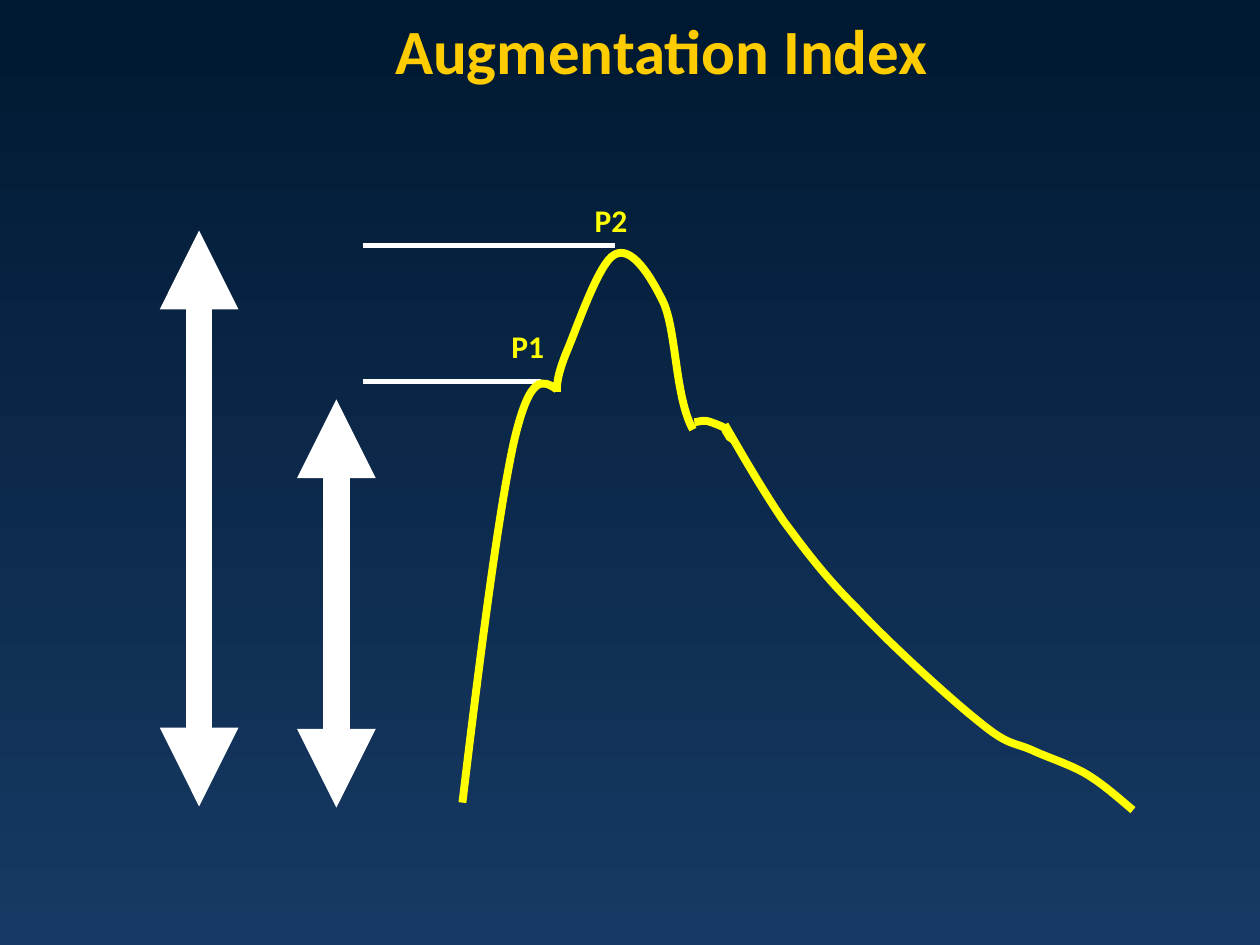
from math import cos, radians, sin

from lxml import etree
from pptx import Presentation
from pptx.dml.color import RGBColor
from pptx.enum.shapes import MSO_CONNECTOR
from pptx.enum.text import MSO_ANCHOR, MSO_AUTO_SIZE, PP_ALIGN
from pptx.oxml.ns import qn
from pptx.util import Inches, Pt


def color(hex_code):
    return RGBColor.from_string(hex_code)


def turn_back(point, center, degrees):
    angle = radians(degrees)
    dx, dy = point[0] - center[0], point[1] - center[1]
    return (Inches(center[0] + dx * cos(angle) + dy * sin(angle)),
            Inches(center[1] - dx * sin(angle) + dy * cos(angle)))


class WaveformSlide:
    """Style and drawing methods for a pulse waveform slide."""

    font = "Calibri"
    title_color = "FFCC00"
    wave_color = "FFFF00"
    measure_color = "FFFFFF"
    background = ("173963", "001932")

    def __init__(self, presentation):
        self.slide = presentation.slides.add_slide(presentation.slide_layouts[6])
        fill = self.slide.background.fill
        fill.gradient()
        fill.gradient_angle = 90
        for stop, position, shade in zip(fill.gradient_stops, (0, 1), self.background):
            stop.position = position
            stop.color.rgb = color(shade)

    def text(self, wording, left, top, width, height, size, shade):
        box = self.slide.shapes.add_textbox(
            Inches(left), Inches(top), Inches(width), Inches(height))
        frame = box.text_frame
        frame.text = wording
        run_font = frame.paragraphs[0].runs[0].font
        run_font.name, run_font.size, run_font.bold = self.font, Pt(size), True
        run_font.color.rgb = color(shade)
        return frame

    def title(self, wording):
        frame = self.text(wording, 0.75, 0, 9, 0.78, 36, self.title_color)
        frame.word_wrap = True
        frame.vertical_anchor = MSO_ANCHOR.MIDDLE
        frame.paragraphs[0].alignment = PP_ALIGN.CENTER

    def peak_label(self, wording, left, top):
        frame = self.text(wording, left, top, 0.51, 0.4, 18, self.wave_color)
        frame.word_wrap = False
        frame.auto_size = MSO_AUTO_SIZE.SHAPE_TO_FIT_TEXT

    def line(self, x1, y1, x2, y2, width):
        connector = self.slide.shapes.add_connector(
            MSO_CONNECTOR.STRAIGHT, Inches(x1), Inches(y1), Inches(x2), Inches(y2))
        connector.line.color.rgb = color(self.measure_color)
        connector.line.width = Pt(width)
        etree.SubElement(connector._element.spPr, qn("a:effectLst"))
        return connector

    def level(self, y, right):
        self.line(2.88, y, right, y, 3)

    def height_arrow(self, x, top, bottom):
        arrow = self.line(x, top, x, bottom, 15)
        outline = arrow.line._get_or_add_ln()
        for end in ("a:headEnd", "a:tailEnd"):
            etree.SubElement(outline, qn(end), type="triangle")

    def wave(self, points, center=(0, 0), rotation=0):
        start, *handles = [turn_back(point, center, rotation) for point in points]
        builder = self.slide.shapes.build_freeform(*start)
        builder.add_line_segments(handles, close=False)
        curve = builder.convert_to_shape()
        self.bend(curve)
        curve.rotation = rotation
        curve.shadow.inherit = False
        curve.fill.background()
        curve.line.color.rgb = color(self.wave_color)
        curve.line.width = Pt(4.5)

    def bend(self, curve):
        outline = next(curve._element.iter(qn("a:moveTo"))).getparent()
        corners = outline.findall(qn("a:lnTo"))
        for first in range(0, len(corners), 3):
            segment = etree.SubElement(outline, qn("a:cubicBezTo"))
            for corner in corners[first:first + 3]:
                segment.append(corner[0])
                outline.remove(corner)


def main():
    presentation = Presentation()
    presentation.slide_width, presentation.slide_height = Inches(10), Inches(7.5)
    slide = WaveformSlide(presentation)

    slide.title("Augmentation Index")
    slide.level(1.95, 4.88)
    slide.level(3.03, 4.29)
    slide.peak_label("P2", 4.62, 1.55)
    slide.peak_label("P1", 3.96, 2.55)
    slide.height_arrow(1.58, 1.83, 6.4)

    notch = [(5.51, 3.35),
             (5.53, 3.35), (5.56, 3.34), (5.58, 3.34),
             (5.6, 3.34), (5.62, 3.34), (5.64, 3.35),
             (5.67, 3.36), (5.72, 3.38), (5.74, 3.39),
             (5.76, 3.4), (5.76, 3.41), (5.76, 3.42),
             (5.77, 3.44), (5.78, 3.45), (5.79, 3.47),
             (5.8, 3.48), (5.81, 3.48), (5.82, 3.49)]
    decay = [(5.75, 3.37),
             (5.9, 3.63), (6.05, 3.89), (6.22, 4.14),
             (6.4, 4.38), (6.53, 4.56), (6.79, 4.82),
             (7.04, 5.09), (7.53, 5.54), (7.77, 5.73),
             (8, 5.92), (8.04, 5.89), (8.18, 5.95),
             (8.33, 6.02), (8.5, 6.07), (8.63, 6.15),
             (8.76, 6.23), (8.87, 6.33), (8.99, 6.43)]
    peak = [(4.42, 3.11),
            (4.42, 3.05), (4.42, 2.99), (4.49, 2.81),
            (4.57, 2.63), (4.75, 2.08), (4.88, 2.02),
            (5.01, 1.95), (5.16, 2.18), (5.27, 2.41),
            (5.37, 2.65), (5.36, 3.16), (5.5, 3.41)]
    upstroke = [(3.67, 6.37),
                (3.81, 5.2), (3.96, 4.04), (4.08, 3.5),
                (4.21, 2.95), (4.31, 3.02), (4.42, 3.09)]
    slide.wave(notch, center=(5.67, 3.4), rotation=13)
    slide.wave(decay, center=(7.29, 4.97), rotation=48)
    slide.wave(peak)
    slide.wave(upstroke)

    slide.height_arrow(2.67, 3.17, 6.41)
    presentation.save("out.pptx")


if __name__ == "__main__":
    main()
